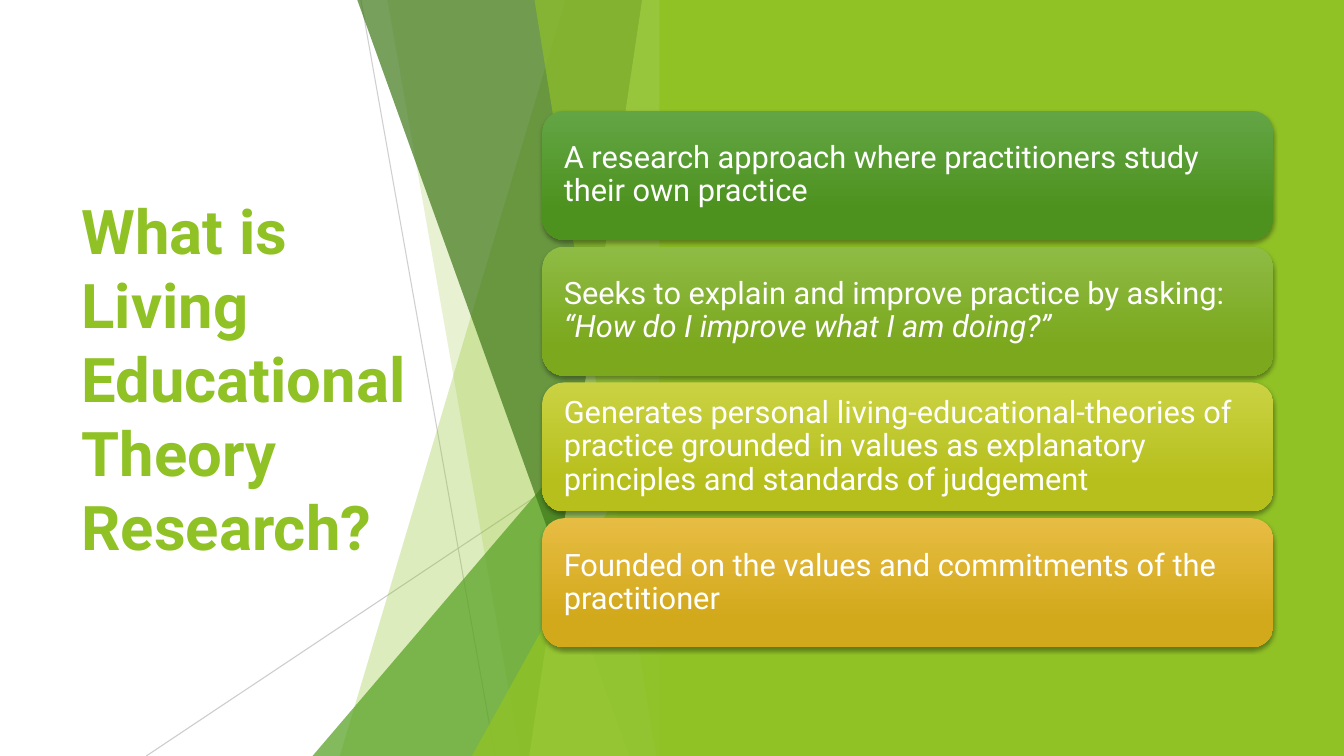
from lxml.etree import SubElement
from pptx import Presentation
from pptx.dml.color import RGBColor
from pptx.enum.shapes import MSO_CONNECTOR, MSO_SHAPE
from pptx.enum.text import MSO_ANCHOR, PP_ALIGN
from pptx.oxml.ns import qn
from pptx.util import Inches, Pt

WHITE = RGBColor(0xFF, 0xFF, 0xFF)
BLACK = RGBColor(0x00, 0x00, 0x00)
LIME = RGBColor(0x90, 0xC2, 0x26)
GREEN = RGBColor(0x54, 0xA0, 0x21)
DARK_GREEN = RGBColor(0x3F, 0x78, 0x19)
PALE_LIME = RGBColor(0xC0, 0xE4, 0x74)
GREY = RGBColor(0xBF, 0xBF, 0xBF)

FACET_RIGHT = 6.66
SLIDE_WIDTH, SLIDE_HEIGHT = 13.33, 7.5

# Card gradient (top, bottom) and text runs (text, italic), one list per line
CARDS = [
    (RGBColor(0x63, 0xA5, 0x45), RGBColor(0x4D, 0x92, 0x1E),
     [[("A research approach where practitioners study their own practice", False)]]),
    (RGBColor(0x8E, 0xBB, 0x44), RGBColor(0x7B, 0xA8, 0x1D),
     [[("Seeks to explain and improve practice by asking:", False)],
      [("“How do I improve what I am doing?”", True)]]),
    (RGBColor(0xCA, 0xD2, 0x43), RGBColor(0xB6, 0xBF, 0x1B),
     [[("Generates personal living-educational-theories of practice grounded in "
        "values as explanatory principles and standards of judgement", False)]]),
    (RGBColor(0xE7, 0xBC, 0x43), RGBColor(0xD2, 0xA9, 0x1B),
     [[("Founded on the values and commitments of the practitioner", False)]]),
]


def set_alpha(color_element, percent):
    SubElement(color_element, qn("a:alpha")).set("val", str(percent * 1000))


class SlideBuilder:
    font = "Roboto"

    def __init__(self, slide):
        self.slide = slide
        self.shapes = slide.shapes

    def paint(self, shape, color, opacity=100):
        shape.shadow.inherit = False
        shape.fill.solid()
        shape.fill.fore_color.rgb = color
        shape.line.fill.background()
        if opacity < 100:
            fill = shape._element.spPr.find(qn("a:solidFill"))
            set_alpha(fill[0], opacity)

    def panel(self, left, width, color):
        panel = self.shapes.add_shape(MSO_SHAPE.RECTANGLE, Inches(left), 0,
                                      Inches(width), Inches(SLIDE_HEIGHT))
        self.paint(panel, color)

    def hairline(self, start, end, opacity):
        hairline = self.shapes.add_connector(
            MSO_CONNECTOR.STRAIGHT, *(Inches(value) for value in start + end))
        hairline.line.width = Pt(0.75)
        hairline.line.color.rgb = GREY
        properties = hairline._element.spPr
        set_alpha(properties.find(".//" + qn("a:srgbClr")), opacity)
        SubElement(properties, qn("a:effectLst"))

    def facet(self, top_left, bottom_left, color, opacity):
        """Full-height band with a slanted left edge."""
        top, bottom, right = Inches(-0.01), Inches(SLIDE_HEIGHT), Inches(FACET_RIGHT)
        outline = self.shapes.build_freeform(Inches(top_left), top)
        outline.add_line_segments(
            [(right, top), (right, bottom), (Inches(bottom_left), bottom)])
        self.paint(outline.convert_to_shape(), color, opacity)

    def corner(self, left, top, color, opacity):
        """Right triangle standing on the bottom edge."""
        corner = self.shapes.add_shape(
            MSO_SHAPE.ISOSCELES_TRIANGLE, Inches(left), Inches(top),
            Inches(FACET_RIGHT - left), Inches(SLIDE_HEIGHT - top))
        corner.adjustments[0] = 1
        self.paint(corner, color, opacity)

    def run(self, paragraph, text, size, color, bold=False, italic=False):
        run = paragraph.add_run()
        run.text = text
        run.font.name = self.font
        run.font.size = Pt(size)
        run.font.bold = bold
        run.font.italic = italic
        run.font.color.rgb = color

    def title(self, text, left, top, width, height):
        frame = self.shapes.add_textbox(Inches(left), Inches(top), Inches(width),
                                        Inches(height)).text_frame
        frame.word_wrap = True
        frame.vertical_anchor = MSO_ANCHOR.MIDDLE
        self.run(frame.paragraphs[0], text, 44, LIME, bold=True)

    def card(self, top, top_color, bottom_color, lines):
        card = self.shapes.add_shape(MSO_SHAPE.ROUNDED_RECTANGLE, Inches(5.38),
                                     Inches(top), Inches(7.25), Inches(1.28))
        card.line.fill.background()
        card.fill.gradient()
        card.fill.gradient_angle = 270
        stops = zip(card.fill.gradient_stops, (0, 0.78), (top_color, bottom_color))
        for stop, position, color in stops:
            stop.position = position
            stop.color.rgb = color
        self.drop_shadow(card)

        frame = card.text_frame
        frame.word_wrap = True
        frame.vertical_anchor = MSO_ANCHOR.MIDDLE
        frame.margin_left = frame.margin_right = Inches(0.15)
        frame.margin_top = frame.margin_bottom = Inches(0.15)
        paragraph = frame.paragraphs[0]
        paragraph.alignment = PP_ALIGN.LEFT
        paragraph.line_spacing = 0.9
        for index, line in enumerate(lines):
            if index:
                paragraph.add_line_break()
            for text, italic in line:
                self.run(paragraph, text, 22, WHITE, italic=italic)

    def drop_shadow(self, shape):
        shape.shadow.inherit = False
        effects = shape._element.spPr.find(qn("a:effectLst"))
        shadow = SubElement(effects, qn("a:outerShdw"), blurRad=str(Pt(3)),
                            dist=str(Pt(2)), dir="5400000", rotWithShape="0")
        color = SubElement(shadow, qn("a:srgbClr"), val=str(BLACK))
        set_alpha(color, 35)


def main():
    deck = Presentation()
    deck.slide_width, deck.slide_height = Inches(SLIDE_WIDTH), Inches(SLIDE_HEIGHT)
    builder = SlideBuilder(deck.slides.add_slide(deck.slide_layouts[6]))

    # White ground and title
    builder.panel(0, SLIDE_WIDTH, WHITE)
    builder.title("What is Living Educational Theory Research?", 0.71, 1.51, 3.88, 4.48)

    # Faceted decoration, back to front
    builder.hairline((3.58, 0), (4.91, 7.5), 75)
    builder.hairline((6.66, 4.03), (1.45, 7.5), 80)
    builder.facet(5.61, 3.37, LIME, 30)
    builder.facet(3.84, 5.16, LIME, 20)
    builder.corner(3.1, 3.33, GREEN, 72)
    builder.facet(3.54, 6.24, DARK_GREEN, 70)
    builder.facet(6.37, 5.25, PALE_LIME, 70)
    builder.facet(5.3, 6.51, LIME, 65)
    builder.corner(4.68, 3.93, LIME, 80)

    # Green side panel
    builder.panel(6.54, SLIDE_WIDTH - 6.54, LIME)

    # Stack of statement cards
    for index, (top_color, bottom_color, lines) in enumerate(CARDS):
        builder.card(1.1 + index * 1.347, top_color, bottom_color, lines)

    deck.save("out.pptx")


if __name__ == "__main__":
    main()
